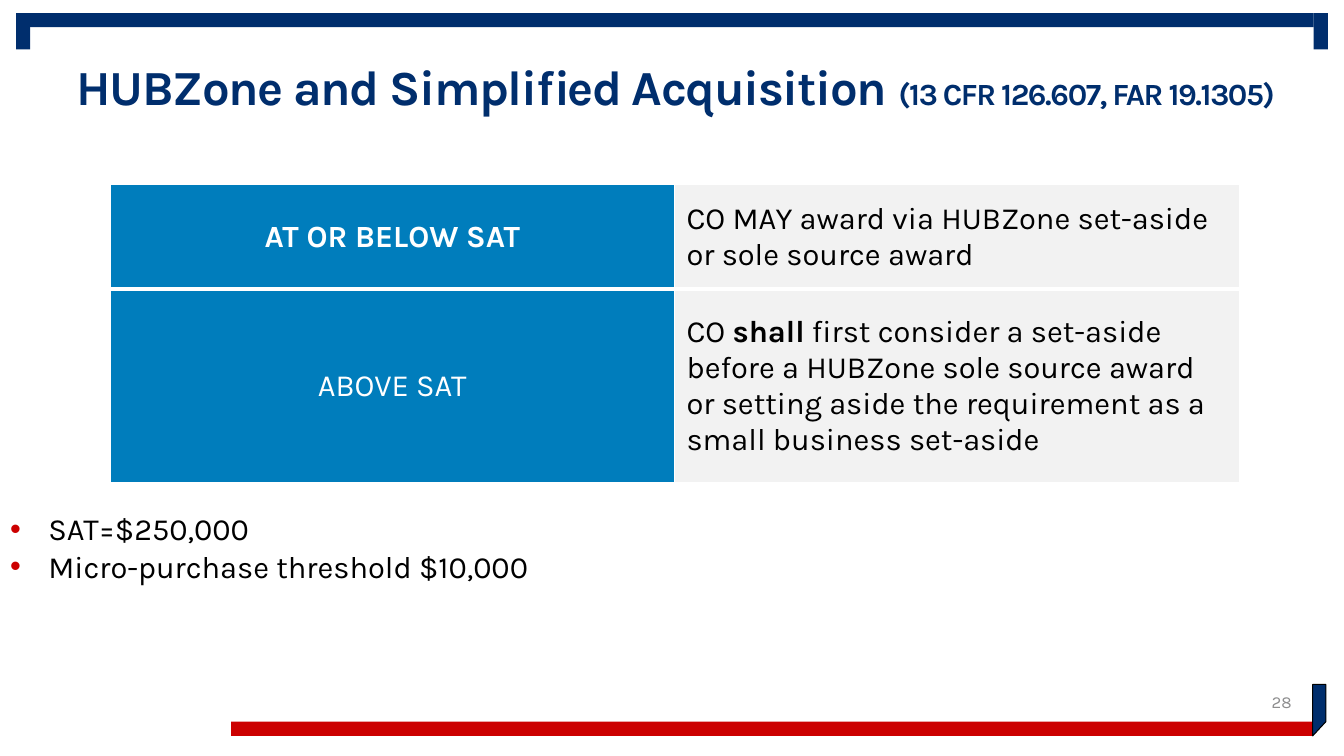
"""Build the slide on HUBZone awards and the simplified acquisition threshold."""
from lxml import etree
from pptx import Presentation
from pptx import util as u
from pptx.dml.color import RGBColor
from pptx.enum import shapes, text
from pptx.oxml.ns import qn

PX = 9144
NAVY = RGBColor(0x00, 0x2E, 0x6D)
RED = RGBColor(0xCC, 0x00, 0x00)
BLUE = RGBColor(0x00, 0x7D, 0xBC)
PALE = RGBColor(0xF2, 0xF2, 0xF2)
GREY = RGBColor(0x8D, 0x8D, 0x8E)
WHITE = RGBColor(0xFF, 0xFF, 0xFF)
BLACK = RGBColor(0x00, 0x00, 0x00)


def place(part, left, top, width, height):
    part.left, part.top = left * PX, top * PX
    part.width, part.height = width * PX, height * PX


def style(run, size, color, bold=False):
    run.font.name = "Karla"
    run.font.size = u.Pt(size)
    run.font.color.rgb = color
    run.font.bold = bold


deck = Presentation()
deck.slide_width, deck.slide_height = 1333 * PX, 750 * PX
slide = deck.slides.add_slide(deck.slide_layouts[1])
title, notes = slide.placeholders

frame_bars = [(1303, 13, 14, 36), (16, 13, 1287, 14), (16, 13, 14, 36)]
for box in frame_bars:
    bar = slide.shapes.add_shape(shapes.MSO_SHAPE.RECTANGLE, *[n * PX for n in box])
    bar.shadow.inherit = False
    bar.fill.solid()
    bar.fill.fore_color.rgb = NAVY
    bar.line.fill.background()

footer_band = [(13, 679), (13, 730), (1302, 730), (1302, 716), (28, 716), (26, 715), (26, 679)]
footer_fold = [(1302, 679), (1302, 730), (1315, 716), (1315, 679)]
for points, color in ((footer_band, RED), (footer_fold, NAVY)):
    outline = slide.shapes.build_freeform(*points[0], scale=PX)
    outline.add_line_segments(points[1:], close=True)
    footer = outline.convert_to_shape()
    footer.shadow.inherit = False
    footer.fill.solid()
    footer.fill.fore_color.rgb = color
    footer.line.fill.background()
footer.line.color.rgb = BLACK
footer.line.width = u.Pt(0)

footer_gap = slide.shapes.add_shape(shapes.MSO_SHAPE.RECTANGLE, 0, 673 * PX, 229 * PX, 76 * PX)
footer_gap.shadow.inherit = False
footer_gap.fill.solid()
footer_gap.fill.fore_color.rgb = WHITE
footer_gap.line.fill.background()

place(title, 66, 58, 1233, 91)
title.text_frame.auto_size = text.MSO_AUTO_SIZE.NONE
title.text_frame.vertical_anchor = text.MSO_ANCHOR.TOP
heading = title.text_frame.paragraphs[0]
heading.alignment = text.PP_ALIGN.LEFT
heading.line_spacing = 0.9
for words, size in (("HUBZone and Simplified Acquisition ", 35), ("(13 CFR 126.607, FAR 19.1305)", 22)):
    run = heading.add_run()
    run.text = words
    style(run, size, NAVY, True)
    run.font._element.set("spc", "-100")

page = slide.shapes.add_textbox(991 * PX, 676 * PX, 300 * PX, 40 * PX)
page.text_frame.word_wrap = True
page.text_frame.vertical_anchor = text.MSO_ANCHOR.MIDDLE
page.text_frame.text = "28"
page_number = page.text_frame.paragraphs[0]
page_number.alignment = text.PP_ALIGN.RIGHT
style(page_number.runs[0], 12, GREY)

place(notes, 0, 505, 1025, 115)
notes.text_frame.auto_size = text.MSO_AUTO_SIZE.NONE
notes.text_frame.text = "SAT=$250,000\nMicro-purchase threshold $10,000"
for index, threshold in enumerate(notes.text_frame.paragraphs):
    threshold.level = 1
    props = threshold._p.get_or_add_pPr()
    props.set("marL", str(38 * PX))
    props.set("indent", str(-38 * PX))
    bullet_color = etree.SubElement(props, qn("a:buClr"))
    etree.SubElement(bullet_color, qn("a:srgbClr"), val=str(RED))
    etree.SubElement(props, qn("a:buFont"), typeface="Arial")
    etree.SubElement(props, qn("a:buChar"), char="•")
    threshold.line_spacing = 0.9
    threshold.space_before = u.Pt(3 if index else 0)
    style(threshold.runs[0], 22, BLACK)

rules = [
    ([("AT OR BELOW SAT", True)],
     [("CO MAY award via HUBZone set-aside or sole source award", False)]),
    ([("ABOVE SAT", False)],
     [("CO ", False), ("shall", True),
      (" first consider a set-aside before a HUBZone sole source award or setting "
       "aside the requirement as a small business set-aside", False)]),
]
table = slide.shapes.add_table(2, 2, 109 * PX, 183 * PX, 1120 * PX, 296 * PX).table
table.first_row = table.horz_banding = False
table.rows[0].height, table.rows[1].height = 104 * PX, 192 * PX
borders = [{"L": 1, "R": 1, "T": 1, "B": 3}, {"L": 1, "R": 1, "T": 3, "B": 1}]
columns = [(BLUE, WHITE, text.PP_ALIGN.CENTER), (PALE, BLACK, text.PP_ALIGN.LEFT)]
for row, rule in enumerate(rules):
    for column, (fill, ink, alignment) in enumerate(columns):
        cell = table.cell(row, column)
        cell.vertical_anchor = text.MSO_ANCHOR.MIDDLE
        cell.margin_left = cell.margin_right = 12 * PX
        cell.margin_top = cell.margin_bottom = 6 * PX
        for side, width in borders[row].items():
            edge = etree.SubElement(cell._tc.get_or_add_tcPr(), qn("a:ln" + side), w=str(u.Pt(width)))
            edge_fill = etree.SubElement(edge, qn("a:solidFill"))
            etree.SubElement(edge_fill, qn("a:srgbClr"), val=str(WHITE))
        cell.fill.solid()
        cell.fill.fore_color.rgb = fill
        wording = cell.text_frame.paragraphs[0]
        wording.alignment = alignment
        for words, bold in rule[column]:
            run = wording.add_run()
            run.text = words
            style(run, 22, ink, bold)

deck.save("out.pptx")
